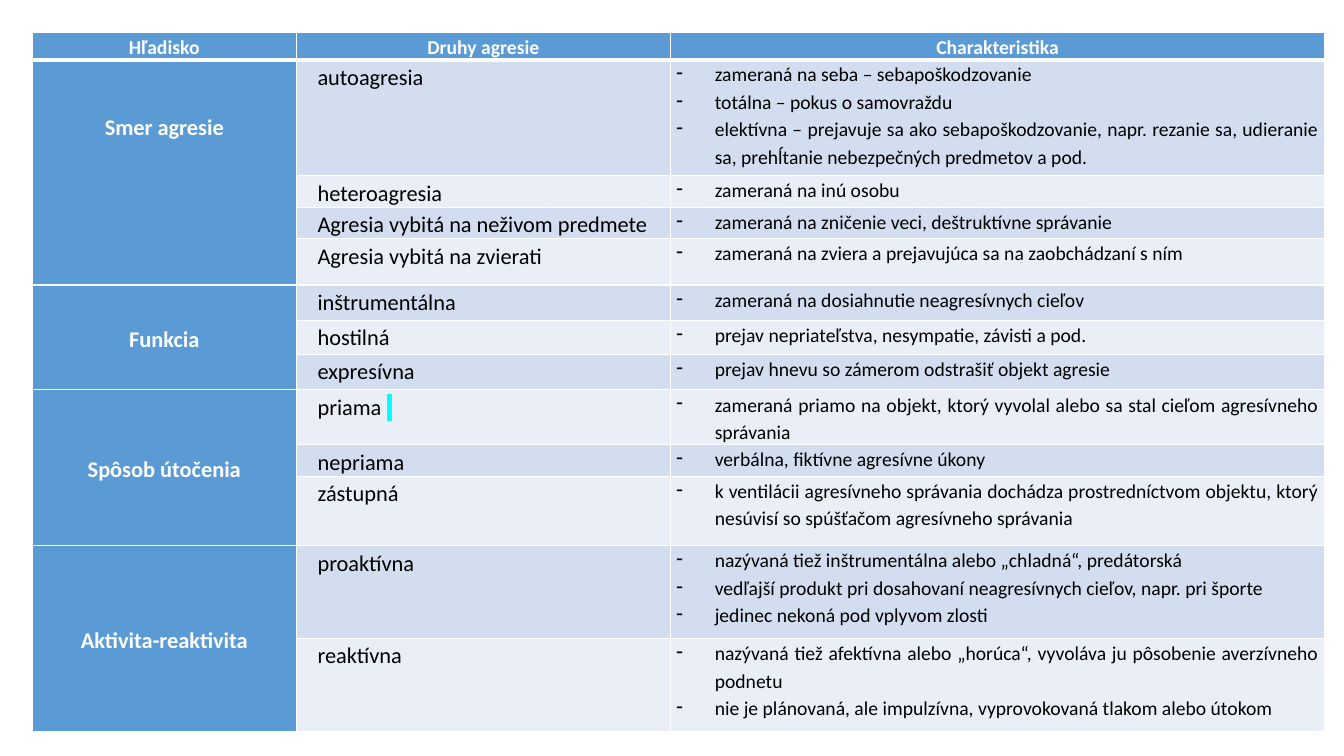
from lxml.etree import SubElement
from pptx import Presentation
from pptx.dml.color import RGBColor
from pptx.enum.text import MSO_ANCHOR, PP_ALIGN
from pptx.oxml.ns import qn
from pptx.util import Inches, Pt

# Content: (aspect, [(kind, row height, [traits])])
HEADINGS = ["Hľadisko", "Druhy agresie", "Charakteristika"]
GROUPS = [
    ("Smer agresie", [
        ("autoagresia ", 1.15, [
            "zameraná na seba – sebapoškodzovanie",
            "totálna – pokus o samovraždu",
            "elektívna – prejavuje sa ako sebapoškodzovanie, napr. rezanie sa, "
            "udieranie sa, prehĺtanie nebezpečných predmetov a pod."]),
        ("heteroagresia", 0.29, ["zameraná na inú osobu "]),
        ("Agresia vybitá na neživom predmete", 0.29,
         ["zameraná na zničenie veci, deštruktívne správanie"]),
        ("Agresia vybitá na zvierati", 0.46,
         ["zameraná na zviera a prejavujúca sa na zaobchádzaní s ním"]),
    ]),
    ("Funkcia", [
        ("inštrumentálna ", 0.35, ["zameraná na dosiahnutie neagresívnych cieľov"]),
        ("hostilná ", 0.34, ["prejav nepriateľstva, nesympatie, závisti a pod."]),
        ("expresívna ", 0.35, ["prejav hnevu so zámerom odstrašiť objekt agresie"]),
    ]),
    ("Spôsob útočenia", [
        ("priama ", 0.54, ["zameraná priamo na objekt, ktorý vyvolal alebo sa stal "
                           "cieľom agresívneho správania"]),
        ("nepriama ", 0.3, ["verbálna, fiktívne agresívne úkony"]),
        ("zástupná ", 0.69, [
            "k ventilácii agresívneho správania dochádza prostredníctvom objektu, "
            "ktorý nesúvisí so spúšťačom agresívneho správania "]),
    ]),
    ("Aktivita-reaktivita", [
        ("proaktívna ", 0.92, [
            "nazývaná tiež inštrumentálna alebo „chladná“, predátorská",
            "vedľajší produkt pri dosahovaní neagresívnych cieľov, napr. pri športe",
            "jedinec nekoná pod vplyvom zlosti"]),
        ("reaktívna ", 0.92, [
            "nazývaná tiež afektívna alebo „horúca“, vyvoláva ju pôsobenie "
            "averzívneho podnetu",
            "nie je plánovaná, ale impulzívna, vyprovokovaná tlakom alebo útokom"]),
    ]),
]
HIGHLIGHTED_KIND = "priama "
COLORS = {"head": "5B9BD5", "odd": "D2DEEF", "even": "EAEFF7",
          "white": "FFFFFF", "black": "000000", "marker": "00FFFF"}
COLUMN_WIDTHS = [2.62, 3.71, 6.49]
HEADER_HEIGHT = 0.25
LEFT, TOP = 0.32, 0.32
SIDE_MARGIN = 0.06
KIND_INDENT, TRAIT_INDENT = 0.15, 0.38
FIRST_ASPECT_LIFT = 0.93


def add_color(parent, tag, color):
    SubElement(SubElement(parent, qn(tag)), qn("a:srgbClr")).set("val", color)


def style_cell(cell, fill, bottom_width=1):
    """Set margins, white borders and fill."""
    cell.margin_left = cell.margin_right = Inches(SIDE_MARGIN)
    cell.margin_top = cell.margin_bottom = 0
    properties = cell._tc.get_or_add_tcPr()
    for side, width in (("L", 1), ("R", 1), ("T", 1), ("B", bottom_width)):
        line = SubElement(properties, qn(f"a:ln{side}"), w=str(Pt(width)))
        add_color(line, "a:solidFill", COLORS["white"])
    cell.fill.solid()
    cell.fill.fore_color.rgb = RGBColor.from_string(COLORS[fill])


def write_cell(cell, lines, size, color, align, bold=False, indent=0, bullet=None):
    for index, line in enumerate(lines):
        frame = cell.text_frame
        para = frame.paragraphs[0] if index == 0 else frame.add_paragraph()
        para.add_run().text = line
        properties = para._p.get_or_add_pPr()
        properties.set("marL", str(Inches(indent)))
        properties.set("indent", str(-Inches(indent) if bullet else 0))
        if bullet:
            SubElement(properties, qn("a:buChar")).set("char", bullet)
        para.alignment = align
        para.line_spacing = 1.15
        para.font.name = "Calibri"
        para.font.size = Pt(size)
        para.font.bold = bold
        para.font.color.rgb = RGBColor.from_string(COLORS[color])


def write_heading(cell, text, size):
    cell.vertical_anchor = MSO_ANCHOR.MIDDLE
    write_cell(cell, [text], size, "white", PP_ALIGN.CENTER, bold=True)


deck = Presentation()
deck.slide_width, deck.slide_height = Inches(13.33), Inches(7.5)
page = deck.slides.add_slide(deck.slide_layouts[6])

# Table grid
heights = [HEADER_HEIGHT] + [height for _, kinds in GROUPS for _, height, _ in kinds]
table = page.shapes.add_table(
    len(heights), len(HEADINGS), Inches(LEFT), Inches(TOP),
    Inches(sum(COLUMN_WIDTHS)), Inches(sum(heights))).table
table.first_row = table.horz_banding = False
for column, width in zip(table.columns, COLUMN_WIDTHS):
    column.width = Inches(width)
for row, height in zip(table.rows, heights):
    row.height = Inches(height)

# Header row
for column, heading in enumerate(HEADINGS):
    style_cell(table.cell(0, column), "head", bottom_width=3)
    write_heading(table.cell(0, column), heading, 14)

# Groups of rows under each aspect
row = 1
for aspect, kinds in GROUPS:
    aspect_cell = table.cell(row, 0)
    for kind, _, traits in kinds:
        band = "odd" if row % 2 else "even"
        for column, fill in enumerate(("head", band, band)):
            style_cell(table.cell(row, column), fill)
        kind_cell = table.cell(row, 1)
        write_cell(kind_cell, [kind], 16, "black", PP_ALIGN.JUSTIFY, indent=KIND_INDENT)
        if kind == HIGHLIGHTED_KIND:
            span = kind_cell.text_frame.paragraphs[0].add_run()
            span.text = " "
            add_color(span._r.get_or_add_rPr(), "a:highlight", COLORS["marker"])
        write_cell(table.cell(row, 2), traits, 14, "black", PP_ALIGN.JUSTIFY,
                   indent=TRAIT_INDENT, bullet="-")
        row += 1
    aspect_cell.merge(table.cell(row - 1, 0))
    write_heading(aspect_cell, aspect, 16)

# The first aspect sits above the middle of its cell
table.cell(1, 0).margin_bottom = Inches(FIRST_ASPECT_LIFT)

deck.save("out.pptx")
